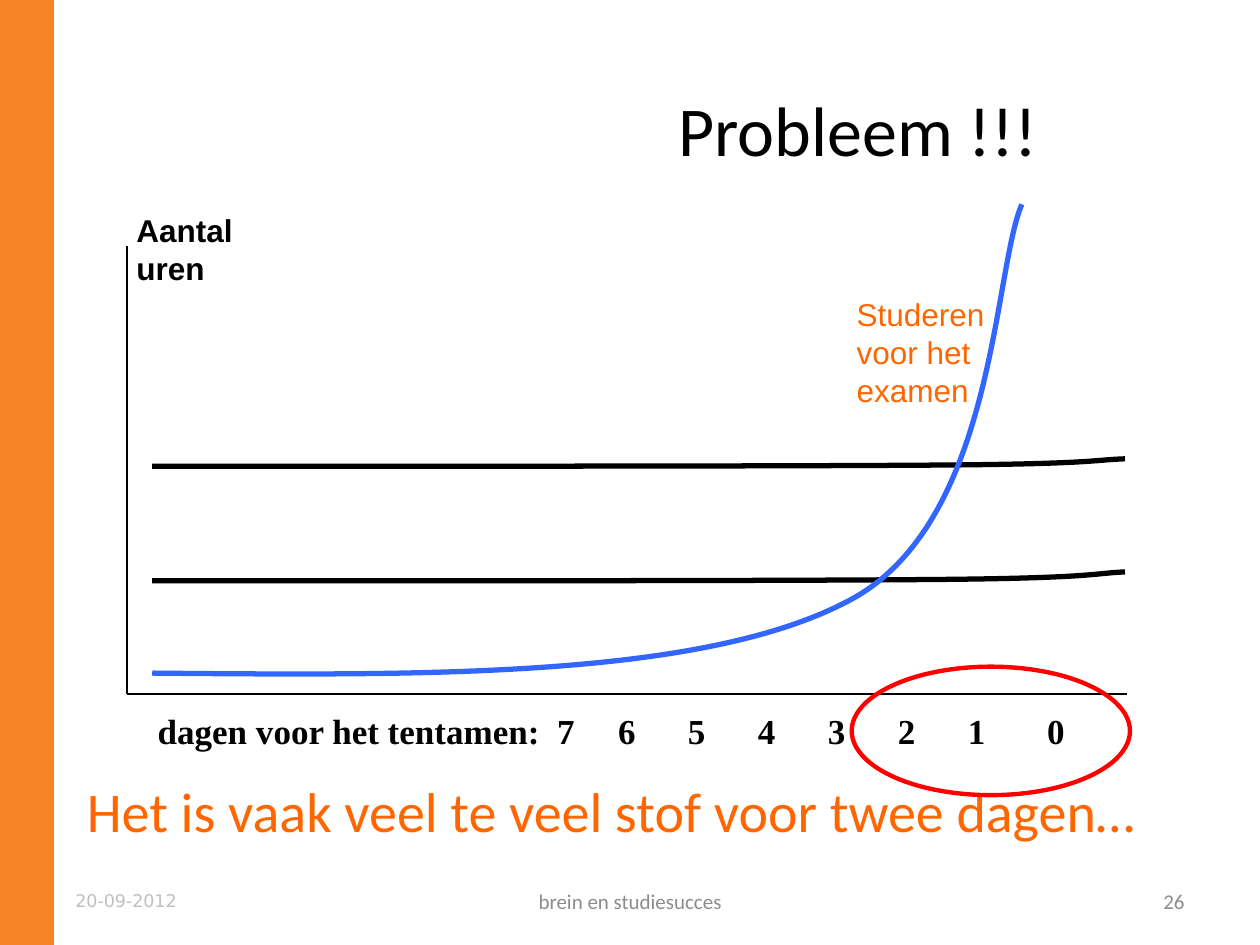
from dataclasses import dataclass
from typing import Any

import lxml.etree
import pptx
import pptx.dml.color
import pptx.enum.shapes
import pptx.enum.text
import pptx.oxml.ns
import pptx.util

Cm = pptx.util.Cm
RGBColor = pptx.dml.color.RGBColor
Align = pptx.enum.text.PP_ALIGN
Anchor = pptx.enum.text.MSO_ANCHOR
Shape = pptx.enum.shapes.MSO_SHAPE

BLACK = RGBColor(0x00, 0x00, 0x00)
BAR_ORANGE = RGBColor(0xF6, 0x84, 0x26)
TEXT_ORANGE = RGBColor(0xFF, 0x66, 0x00)
BLUE = RGBColor(0x33, 0x66, 0xFF)
RED = RGBColor(0xFF, 0x00, 0x00)
GREY = RGBColor(0x8C, 0x8C, 0x8C)
LIGHT_GREY = RGBColor(0xBF, 0xBF, 0xBF)

Point = tuple[float, float]


@dataclass(frozen=True)
class Area:
    left: float
    top: float
    width: float
    height: float

    def lengths(self) -> list[int]:
        return [Cm(value) for value in (self.left, self.top, self.width, self.height)]


@dataclass(frozen=True)
class Label:
    text: str
    area: Area
    style: dict[str, Any]


@dataclass(frozen=True)
class Curve:
    points: list[Point]
    color: RGBColor


def add_element(parent: Any, tag: str, **attributes: str) -> Any:
    return lxml.etree.SubElement(parent, pptx.oxml.ns.qn(tag), attributes)


def write_text(box: Any, text: str, *, size: float, font: str, color: RGBColor,
               bold: bool = False, align: Any = Align.LEFT, anchor: Any = Anchor.TOP,
               inset: float = 0.25, hanging: float = 0,
               tabs: tuple[float, ...] = ()) -> None:
    frame = box.text_frame
    frame.word_wrap = True
    frame.auto_size = pptx.enum.text.MSO_AUTO_SIZE.NONE
    frame.vertical_anchor = anchor
    frame.margin_left = Cm(inset)
    para = frame.paragraphs[0]
    para.alignment = align
    para.space_before = pptx.util.Pt(0)
    properties = para._p.get_or_add_pPr()
    if hanging:
        properties.set("marL", str(Cm(hanging)))
        properties.set("indent", str(-Cm(hanging)))
        add_element(properties, "a:buNone")
    if tabs:
        stops = add_element(properties, "a:tabLst")
        for position in tabs:
            add_element(stops, "a:tab", pos=str(Cm(position)), algn="l")
    span = para.add_run()
    span.text = text
    span.font.size = pptx.util.Pt(size)
    span.font.name = font
    span.font.bold = bold
    span.font.color.rgb = color


def fill_placeholder(box: Any, label: Label) -> None:
    box.left, box.top, box.width, box.height = label.area.lengths()
    write_text(box, label.text, **label.style)


def add_label(page: Any, label: Label) -> None:
    write_text(page.shapes.add_textbox(*label.area.lengths()), label.text, **label.style)


def set_line(shape: Any, color: RGBColor, width: float) -> None:
    shape.line.color.rgb = color
    shape.line.width = pptx.util.Pt(width)


def add_axis(page: Any, start: Point, end: Point) -> None:
    axis = page.shapes.add_connector(pptx.enum.shapes.MSO_CONNECTOR.STRAIGHT,
                                     *[Cm(value) for value in start + end])
    set_line(axis, BLACK, 1)
    add_element(axis._element.spPr, "a:effectLst")


def add_curve(page: Any, curve: Curve) -> None:
    start, *others = [(Cm(x), Cm(y)) for x, y in curve.points]
    builder = page.shapes.build_freeform(*start)
    builder.add_line_segments(others, close=False)
    shape = builder.convert_to_shape()
    outline = next(shape._element.iter(pptx.oxml.ns.qn("a:path")))
    segments = outline.findall(pptx.oxml.ns.qn("a:lnTo"))
    for first in range(0, len(segments), 3):
        bezier = add_element(outline, "a:cubicBezTo")
        for segment in segments[first:first + 3]:
            bezier.append(segment[0])
            outline.remove(segment)
    shape.fill.background()
    shape.shadow.inherit = False
    set_line(shape, curve.color, 3)


def level_curve(base: float, total_rise: float) -> Curve:
    steps = [(3.07, 0), (9.3, 0), (15.54, 0), (18.8, 0.15),
             (22.07, 0.3), (22.02, 0.85), (22.68, 1)]
    return Curve([(x, base - share * total_rise) for x, share in steps], BLACK)


FOOTER = dict(size=12, font="Calibri", color=GREY, anchor=Anchor.MIDDLE)
DAY_TABS = (8.05, *(9.28 + 1.41 * day for day in range(6)), 17.93)

TITLE = Label("Probleem !!!", Area(7.87, 1.54, 18.85, 2.11),
              dict(size=40, font="Calibri", color=BLACK, align=Align.CENTER,
                   anchor=Anchor.MIDDLE))
BODY = Label("Het is vaak veel te veel stof voor twee dagen…", Area(1.5, 15.52, 23.39, 1.8),
             dict(size=32, font="Calibri", color=TEXT_ORANGE, hanging=0.97))
LABELS = [
    Label("20-09-2012", Area(1.27, 17.65, 5.92, 1.02),
          dict(size=10, font="DejaVu Sans", color=LIGHT_GREY, anchor=Anchor.MIDDLE)),
    Label("\t".join(["dagen voor het tentamen:", *"76543210"]),
          Area(2.78, 14.17, 21.54, 1.09),
          dict(size=20, font="Times New Roman", color=BLACK, bold=True, inset=0.4,
               tabs=DAY_TABS)),
    Label("Aantal uren", Area(2.5, 4.13, 2.82, 1.78),
          dict(size=18, font="Arial", color=BLACK, bold=True)),
    Label("Studeren voor het examen", Area(17.02, 5.83, 4.34, 2.54),
          dict(size=18, font="Arial", color=TEXT_ORANGE)),
    Label("brein en studiesucces", Area(8.68, 17.65, 8.05, 1.02),
          dict(FOOTER, align=Align.CENTER)),
    Label("26", Area(18.21, 17.65, 5.92, 1.02), dict(FOOTER, align=Align.RIGHT)),
]
CURVES = [
    level_curve(11.71, 0.18),
    level_curve(9.4, 0.15),
    Curve([(3.07, 13.57), (8.64, 13.62), (14.22, 13.67), (17.15, 12.09),
           (20.07, 10.52), (20.02, 5.46), (20.6, 4.12)], BLUE),
]
ORIGIN = (2.56, 13.99)


def main() -> None:
    deck = pptx.Presentation()
    deck.slide_width, deck.slide_height = Cm(25.4), Cm(19.05)
    page = deck.slides.add_slide(deck.slide_layouts[1])

    bar = page.shapes.add_shape(Shape.RECTANGLE, *Area(0, 0, 1.09, 19.05).lengths())
    bar.fill.solid()
    bar.fill.fore_color.rgb = BAR_ORANGE
    bar.line.fill.background()
    bar.shadow.inherit = False

    fill_placeholder(page.shapes.title, TITLE)
    fill_placeholder(page.placeholders[1], BODY)
    add_axis(page, (ORIGIN[0], 4.95), ORIGIN)
    add_axis(page, ORIGIN, (22.71, ORIGIN[1]))
    for curve in CURVES:
        add_curve(page, curve)
    for label in LABELS:
        add_label(page, label)

    highlight = page.shapes.add_shape(Shape.OVAL, *Area(17.17, 13.44, 5.61, 2.59).lengths())
    highlight.fill.background()
    highlight.shadow.inherit = False
    set_line(highlight, RED, 2.5)
    deck.save("out.pptx")


if __name__ == "__main__":
    main()
